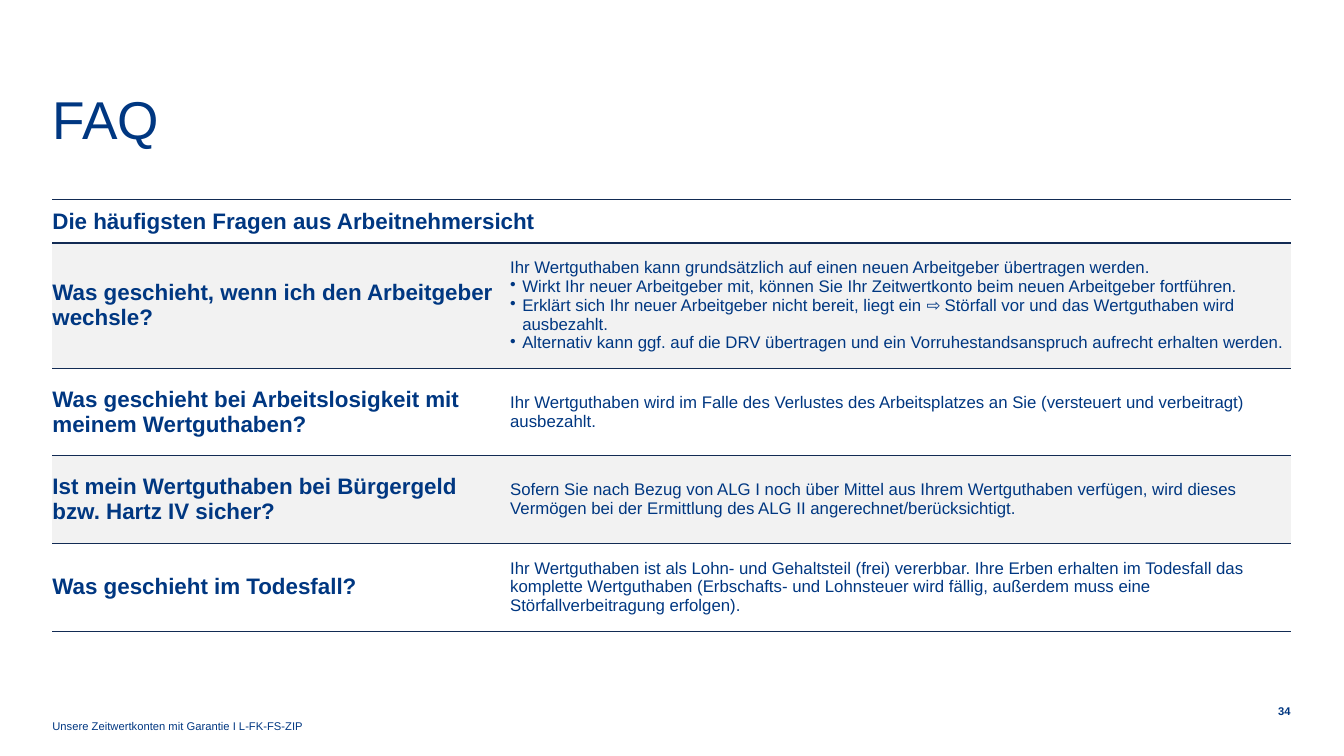
"""Build the FAQ slide on working-time accounts as seen by employees."""
from lxml import etree
from pptx import Presentation
from pptx.dml.color import RGBColor
from pptx.enum.text import MSO_ANCHOR, PP_ALIGN
from pptx.oxml.ns import qn
from pptx.util import Inches, Pt

TOP, MIDDLE, BOTTOM = MSO_ANCHOR.TOP, MSO_ANCHOR.MIDDLE, MSO_ANCHOR.BOTTOM
LEFT, RIGHT = PP_ALIGN.LEFT, PP_ALIGN.RIGHT

THEME = {
    "font": "Arial", "ink": "003781", "rule": "122B54",
    "band": "F2F2F2", "page": "FFFFFF",
    "title": 38, "head": 16, "body": 12, "foot": 8,
}

FAQ = [
    ("Was geschieht, wenn ich den Arbeitgeber wechsle?", [
        "Ihr Wertguthaben kann grundsätzlich auf einen neuen Arbeitgeber übertragen werden.",
        "Wirkt Ihr neuer Arbeitgeber mit, können Sie Ihr Zeitwertkonto beim neuen Arbeitgeber fortführen.",
        "Erklärt sich Ihr neuer Arbeitgeber nicht bereit, liegt ein ⇨ Störfall vor und das Wertguthaben wird ausbezahlt.",
        "Alternativ kann ggf. auf die DRV übertragen und ein Vorruhestandsanspruch aufrecht erhalten werden.",
    ]),
    ("Was geschieht bei Arbeitslosigkeit mit meinem Wertguthaben?", [
        "Ihr Wertguthaben wird im Falle des Verlustes des Arbeitsplatzes an Sie (versteuert und verbeitragt) ausbezahlt.",
    ]),
    ("Ist mein Wertguthaben bei Bürgergeld bzw. Hartz IV sicher?", [
        "Sofern Sie nach Bezug von ALG I noch über Mittel aus Ihrem Wertguthaben verfügen, wird dieses Vermögen bei der Ermittlung des ALG II angerechnet/berücksichtigt.",
    ]),
    ("Was geschieht im Todesfall?", [
        "Ihr Wertguthaben ist als Lohn- und Gehaltsteil (frei) vererbbar. Ihre Erben erhalten im Todesfall das komplette Wertguthaben (Erbschafts- und Lohnsteuer wird fällig, außerdem muss eine Störfallverbeitragung erfolgen).",
    ]),
]


def write(frame, lines, size, bold=False, space=None, align=LEFT):
    """Fill a text frame; every line after the first is a bullet."""
    for i, line in enumerate(lines):
        para = frame.add_paragraph() if i else frame.paragraphs[0]
        para.alignment = align
        if space:
            para.line_spacing = space
        if i:
            props = para._p.get_or_add_pPr()
            props.set("marL", str(Inches(0.12)))
            props.set("indent", str(Inches(-0.12)))
            etree.SubElement(props, qn("a:buChar"), char="•")
        run = para.add_run()
        run.text = line
        run.font.name = THEME["font"]
        run.font.size = Pt(THEME[size])
        run.font.bold = bold
        run.font.color.rgb = RGBColor.from_string(THEME["ink"])


def style(cell, fill, pad, top, base):
    """Set the padding, rules and fill of a table cell."""
    cell.vertical_anchor = MIDDLE
    cell.margin_left = cell.margin_right = 0
    cell.margin_top = cell.margin_bottom = Inches(pad)
    props = cell._tc.get_or_add_tcPr()
    for side, width in (("L", 0), ("R", 0), ("T", top), ("B", base)):
        line = etree.SubElement(props, qn("a:ln" + side), w=str(Pt(width)))
        if width:
            paint = etree.SubElement(line, qn("a:solidFill"))
            etree.SubElement(paint, qn("a:srgbClr"), val=THEME["rule"])
        else:
            etree.SubElement(line, qn("a:noFill"))
    cell.fill.solid()
    cell.fill.fore_color.rgb = RGBColor.from_string(THEME[fill])


deck = Presentation()
deck.slide_width, deck.slide_height = Inches(13.33), Inches(7.5)
slide = deck.slides.add_slide(deck.slide_layouts[5])

title = slide.shapes.title
number = slide.shapes.add_textbox(0, 0, 0, 0)
footer = slide.shapes.add_textbox(0, 0, 0, 0)
texts = [
    (title, (0.52, 0.96, 10.2, 1.02), TOP, "FAQ", "title", False, Pt(38), LEFT),
    (number, (12.51, 6.97, 0.29, 0.16), MIDDLE, "34", "foot", True, Pt(10), RIGHT),
    (footer, (0.52, 6.89, 10.2, 0.38), BOTTOM,
     "Unsere Zeitwertkonten mit Garantie I L-FK-FS-ZIP", "foot", False, 0.9, LEFT),
]
for box, place, anchor, text, size, bold, space, align in texts:
    box.left, box.top, box.width, box.height = map(Inches, place)
    frame = box.text_frame
    frame.word_wrap = True
    frame.vertical_anchor = anchor
    frame.margin_left = frame.margin_right = 0
    frame.margin_top = frame.margin_bottom = 0
    write(frame, [text], size, bold, space, align)

grid = slide.shapes.add_table(
    len(FAQ) + 1, 2, Inches(0.52), Inches(1.98), Inches(12.28), Inches(4.21)).table
grid.first_row = grid.horz_banding = False
for col, width in zip(grid.columns, (4.54, 7.74)):
    col.width = Inches(width)
for row, height in zip(grid.rows, (0.43, 1.17, 0.87, 0.87, 0.87)):
    row.height = Inches(height)

head = grid.cell(0, 0)
head.merge(grid.cell(0, 1))
for cell in grid.rows[0].cells:
    style(cell, "page", 0, 1, 1)
write(head.text_frame, ["Die häufigsten Fragen aus Arbeitnehmersicht"], "head", True, Pt(18))

for i, (ask, reply) in enumerate(FAQ, 1):
    for cell in grid.rows[i].cells:
        style(cell, "band" if i % 2 else "page", 0.12, 1 if i == 1 else 0.5, 0.5)
    write(grid.cell(i, 0).text_frame, [ask], "head", True, Pt(18))
    write(grid.cell(i, 1).text_frame, reply, "body")

deck.save("out.pptx")
